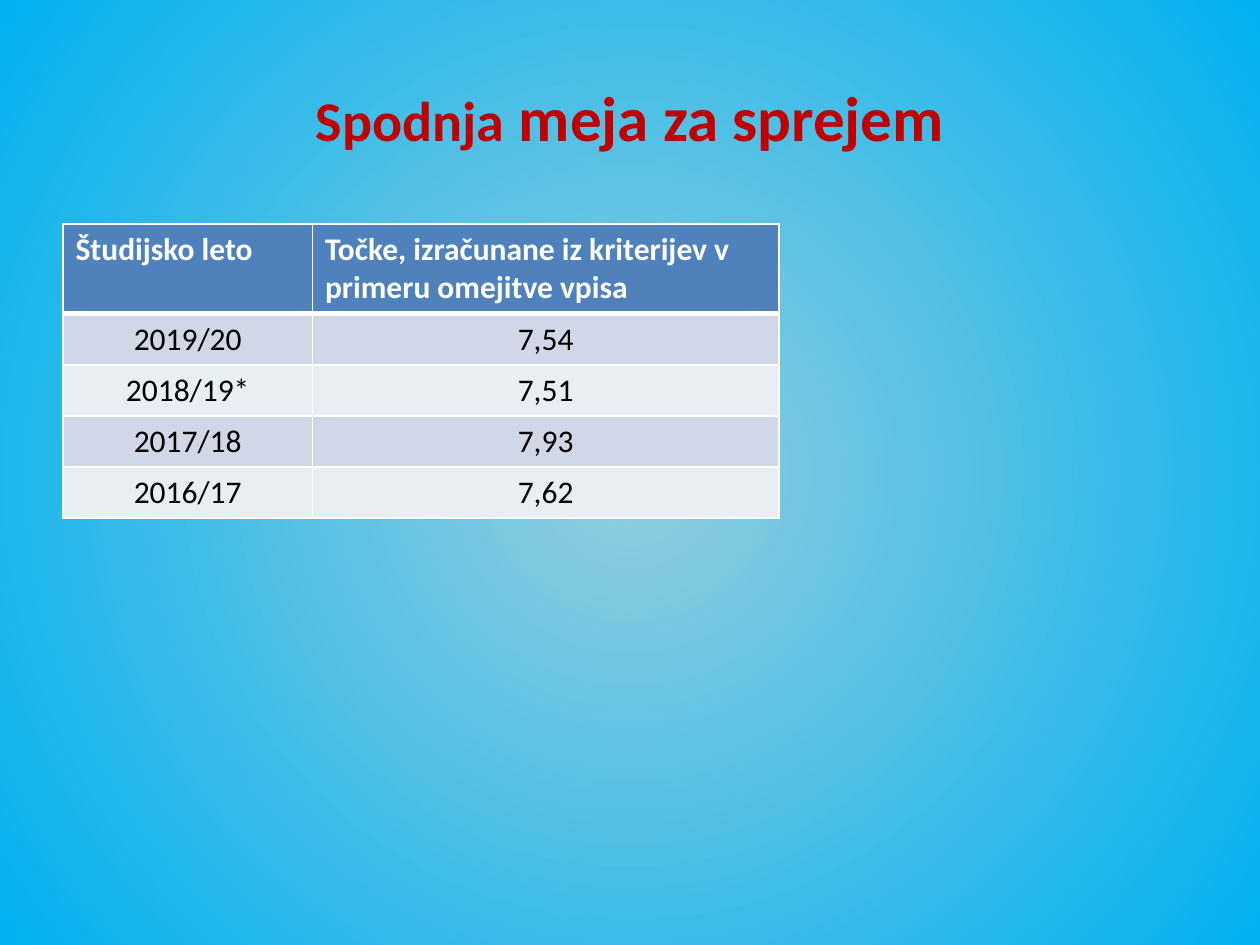
import pptx
import pptx.util
import pptx.dml.color
import pptx.enum.text
import pptx.oxml
import pptx.oxml.ns
from pptx.util import Cm, Pt

RGBColor = pptx.dml.color.RGBColor
ALIGN = pptx.enum.text.PP_ALIGN
ANCHOR = pptx.enum.text.MSO_ANCHOR

RED = RGBColor(0xC0, 0x00, 0x00)
WHITE = RGBColor(0xFF, 0xFF, 0xFF)
BLACK = RGBColor(0x00, 0x00, 0x00)
HEADER_BLUE = RGBColor(0x4F, 0x81, 0xBD)
BANDS = [RGBColor(0xD0, 0xD8, 0xE8), RGBColor(0xE9, 0xED, 0xF4)]
GLOW = RGBColor(0x93, 0xCD, 0xDD)
SKY = RGBColor(0x00, 0xB0, 0xF0)

ROWS = [
    ("Študijsko leto", "Točke, izračunane iz kriterijev v primeru omejitve vpisa"),
    ("2019/20", "7,54"),
    ("2018/19*", "7,51"),
    ("2017/18", "7,93"),
    ("2016/17", "7,62"),
]
COLUMN_WIDTHS = [Cm(5.03), Cm(9.4)]
HEADER_HEIGHT, ROW_HEIGHT = Cm(1.78), Cm(1.03)


def add_span(para, text, color, **format_values):
    span = para.add_run()
    span.text = text
    span.font.color.rgb = color
    for name, value in {"name": "Calibri", **format_values}.items():
        setattr(span.font, name, value)


def set_background(page):
    """Radial gradient, light in the middle."""
    fill = page.background.fill
    fill.gradient()
    for stop, color, position in zip(fill.gradient_stops, (GLOW, SKY), (0, 1)):
        stop.color.rgb = color
        stop.position = position
    gradient = page.element.xpath(".//p:bgPr/a:gradFill")[0]
    for linear in gradient.findall(pptx.oxml.ns.qn("a:lin")):
        gradient.remove(linear)
    gradient.append(pptx.oxml.parse_xml(
        f'<a:path {pptx.oxml.ns.nsdecls("a")} path="circle">'
        '<a:fillToRect l="50000" t="50000" r="50000" b="50000"/></a:path>'))


def set_title(page):
    title = page.shapes.title
    place = {"left": Cm(1.27), "top": Cm(0.76), "width": Cm(22.86), "height": Cm(3.18)}
    for name, value in place.items():
        setattr(title, name, value)
    title.text_frame.vertical_anchor = ANCHOR.MIDDLE
    para = title.text_frame.paragraphs[0]
    para.alignment = ALIGN.CENTER
    add_span(para, "Spodnja", RED, size=Pt(32), bold=True)
    add_span(para, " meja za sprejem", RED, size=Pt(36), bold=True)


def set_borders(cell, widths):
    """Draw white borders; widths in points by side, in schema order."""
    properties = cell._tc.get_or_add_tcPr()
    for index, (side, width) in enumerate(widths.items()):
        properties.insert(index, pptx.oxml.parse_xml(
            f'<a:ln{side} {pptx.oxml.ns.nsdecls("a")} w="{Pt(width)}">'
            f'<a:solidFill><a:srgbClr val="{WHITE}"/></a:solidFill></a:ln{side}>'))


def fill_cell(cell, text, row_index):
    header = row_index == 0
    cell.fill.solid()
    cell.fill.fore_color.rgb = HEADER_BLUE if header else BANDS[(row_index - 1) % 2]
    para = cell.text_frame.paragraphs[0]
    para.alignment = ALIGN.LEFT if header else ALIGN.CENTER
    add_span(para, text, WHITE if header else BLACK, size=Pt(18), bold=header)
    set_borders(cell, {"L": 1, "R": 1, "T": 3 if row_index == 1 else 1,
                       "B": 3 if header else 1})


def add_score_table(page):
    height = HEADER_HEIGHT + ROW_HEIGHT * (len(ROWS) - 1)
    table = page.shapes.add_table(len(ROWS), len(COLUMN_WIDTHS), Cm(1.27), Cm(4.52),
                                  sum(COLUMN_WIDTHS), height).table
    for column, width in zip(table.columns, COLUMN_WIDTHS):
        column.width = width
    for row_index, texts in enumerate(ROWS):
        row = table.rows[row_index]
        row.height = ROW_HEIGHT if row_index else HEADER_HEIGHT
        for cell, text in zip(row.cells, texts):
            fill_cell(cell, text, row_index)


def main():
    deck = pptx.Presentation()
    deck.slide_width, deck.slide_height = Cm(25.4), Cm(19.05)
    # Title Only layout
    page = deck.slides.add_slide(deck.slide_layouts[5])
    set_background(page)
    set_title(page)
    add_score_table(page)
    deck.save("out.pptx")


if __name__ == "__main__":
    main()
